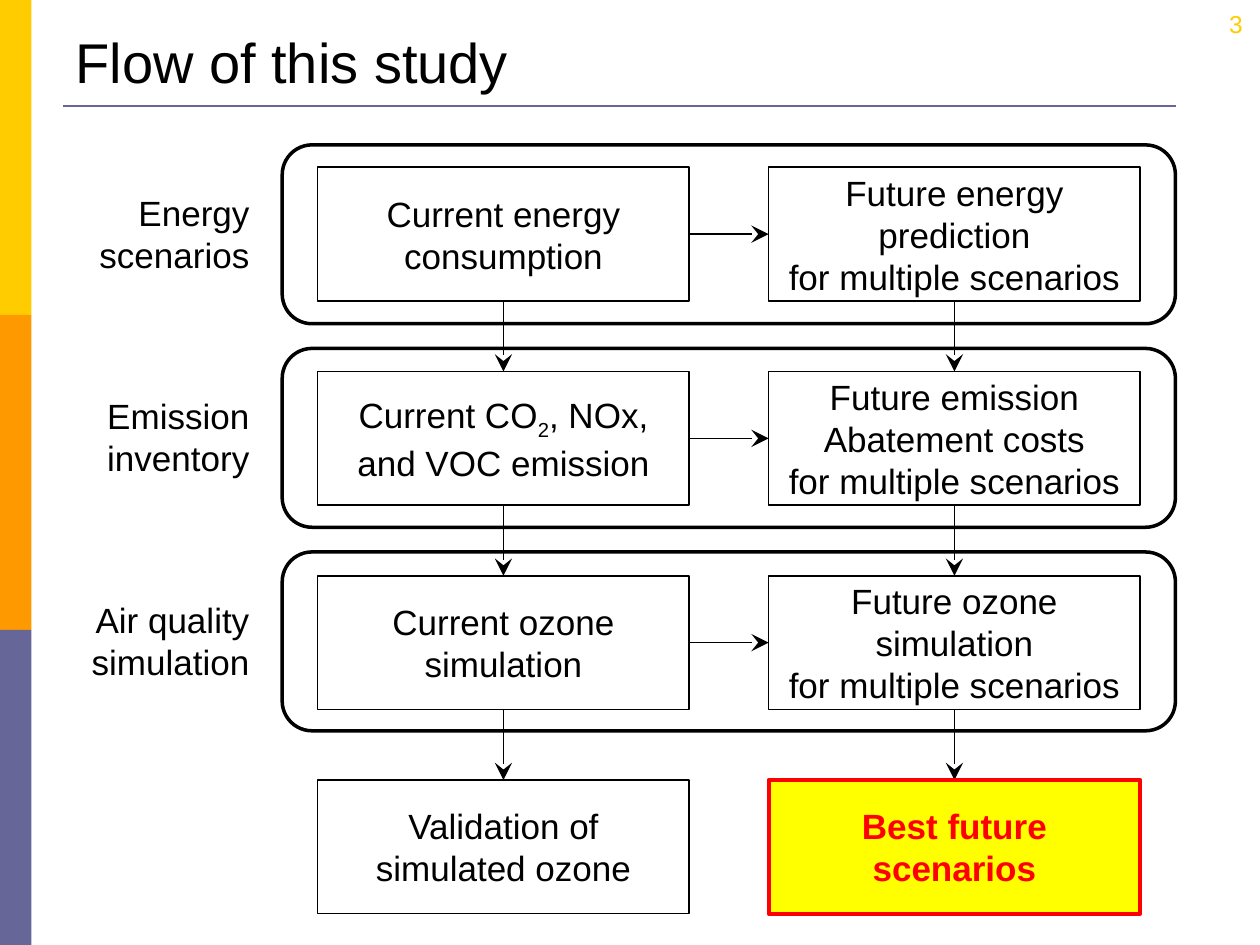
from lxml.etree import SubElement
from pptx import Presentation
from pptx.dml.color import RGBColor
from pptx.enum.shapes import MSO_CONNECTOR, MSO_SHAPE
from pptx.enum.text import MSO_ANCHOR, MSO_AUTO_SIZE, PP_ALIGN
from pptx.oxml.ns import qn
from pptx.util import Pt

BLACK = RGBColor(0x00, 0x00, 0x00)
RED = RGBColor(0xFF, 0x00, 0x00)
YELLOW = RGBColor(0xFF, 0xFF, 0x00)
GOLD = RGBColor(0xFF, 0xCC, 0x00)
ORANGE = RGBColor(0xFF, 0x99, 0x00)
SLATE = RGBColor(0x66, 0x66, 0x99)
FONT = "Arial"

TITLE = "Flow of this study"
PAGE_NUMBER = "3"
STAGES = ["Energy scenarios", "Emission\ninventory", "Air quality simulation"]
# One row per step: current state, future state. "_" marks a subscript character.
STEPS = [
    ("Current energy consumption",
     "Future energy prediction\nfor multiple scenarios"),
    ("Current CO_2, NOx, and VOC emission",
     "Future emission\nAbatement costs\nfor multiple scenarios"),
    ("Current ozone simulation",
     "Future ozone simulation\nfor multiple scenarios"),
    ("Validation of simulated ozone", "Best future scenarios"),
]

COLUMNS = (181.5, 439.2)
BOX_WIDTH, BOX_HEIGHT = 212.4, 76.4
FIRST_BOX, BOX_PITCH = 95.6, 116.7
FRAME_LEFT, FRAME_WIDTH, FRAME_HEIGHT = 161.3, 510.4, 102.2
FIRST_FRAME, FRAME_PITCH = 82.8, 116.3
LABEL_LEFT, LABEL_WIDTH, LABEL_HEIGHT = 36.7, 113, 55.7
FIRST_LABEL = 105.8


def write(frame, text, align, size=20, color=BLACK, bold=False):
    frame.word_wrap = True
    frame.auto_size = MSO_AUTO_SIZE.NONE
    for index, line in enumerate(text.split("\n")):
        para = frame.add_paragraph() if index else frame.paragraphs[0]
        para.alignment = align
        before, mark, after = line.partition("_")
        for part, lowered in ((before, False), (after[:1], True), (after[1:], False)):
            if not part:
                continue
            span = para.add_run()
            span.text = part
            span.font.name = FONT
            span.font.size = Pt(size)
            span.font.bold = bold
            span.font.color.rgb = color
            if lowered:
                span.font._element.set("baseline", "-25000")


def add_box(slide, kind, left, top, width, height, fill=None, line=None, weight=1):
    box = slide.shapes.add_shape(kind, Pt(left), Pt(top), Pt(width), Pt(height))
    box.shadow.inherit = False
    if fill is None:
        box.fill.background()
    else:
        box.fill.solid()
        box.fill.fore_color.rgb = fill
    if line is None:
        box.line.fill.background()
    else:
        box.line.color.rgb = line
        box.line.width = Pt(weight)
    return box


def add_text(slide, left, top, width, height, text, **style):
    box = slide.shapes.add_textbox(Pt(left), Pt(top), Pt(width), Pt(height))
    write(box.text_frame, text, PP_ALIGN.RIGHT, **style)


def add_line(slide, x1, y1, x2, y2, color=BLACK, weight=1, arrow=True):
    line = slide.shapes.add_connector(
        MSO_CONNECTOR.STRAIGHT, Pt(x1), Pt(y1), Pt(x2), Pt(y2))
    line.line.color.rgb = color
    line.line.width = Pt(weight)
    if arrow:
        SubElement(line.line._get_or_add_ln(), qn("a:tailEnd"),
                   type="stealth", w="lg", len="lg")
    SubElement(line._element.spPr, qn("a:effectLst"))


def add_background(slide):
    for index, color in enumerate((GOLD, ORANGE, SLATE)):
        add_box(slide, MSO_SHAPE.RECTANGLE, 0, 180 * index, 18, 180, fill=color)
    add_line(slide, 36, 60.5, 672, 60.5, SLATE, 1.5, arrow=False)


def add_title(slide):
    title = slide.shapes.title
    title.left, title.top, title.width, title.height = Pt(36), Pt(9.4), Pt(648), Pt(48.2)
    title.text_frame.vertical_anchor = MSO_ANCHOR.BOTTOM
    write(title.text_frame, TITLE, PP_ALIGN.LEFT, size=32)
    add_text(slide, 549.4, 1.4, 167.8, 36, PAGE_NUMBER, size=14, color=GOLD)


def add_stages(slide):
    for row, label in enumerate(STAGES):
        offset = FRAME_PITCH * row
        add_box(slide, MSO_SHAPE.ROUNDED_RECTANGLE, FRAME_LEFT, FIRST_FRAME + offset,
                FRAME_WIDTH, FRAME_HEIGHT, line=BLACK, weight=2)
        add_text(slide, LABEL_LEFT, FIRST_LABEL + offset, LABEL_WIDTH, LABEL_HEIGHT, label)


def add_flow(slide):
    last = len(STEPS) - 1
    for row, texts in enumerate(STEPS):
        top = FIRST_BOX + BOX_PITCH * row
        for column, (left, text) in enumerate(zip(COLUMNS, texts)):
            center = left + BOX_WIDTH / 2
            if row:
                add_line(slide, center, top - BOX_PITCH + BOX_HEIGHT, center, top)
            goal = row == last and column == 1
            look = dict(fill=YELLOW, line=RED, weight=2.25) if goal else dict(line=BLACK)
            box = add_box(slide, MSO_SHAPE.RECTANGLE, left, top,
                          BOX_WIDTH, BOX_HEIGHT, **look)
            box.text_frame.vertical_anchor = MSO_ANCHOR.MIDDLE
            write(box.text_frame, text, PP_ALIGN.CENTER,
                  color=RED if goal else BLACK, bold=goal)
        if row < last:
            middle = top + BOX_HEIGHT / 2
            add_line(slide, COLUMNS[0] + BOX_WIDTH, middle, COLUMNS[1], middle)


def main():
    deck = Presentation()
    deck.slide_width, deck.slide_height = Pt(720), Pt(540)
    slide = deck.slides.add_slide(deck.slide_layouts[5])
    add_background(slide)
    add_title(slide)
    add_stages(slide)
    add_flow(slide)
    deck.save("out.pptx")


if __name__ == "__main__":
    main()
